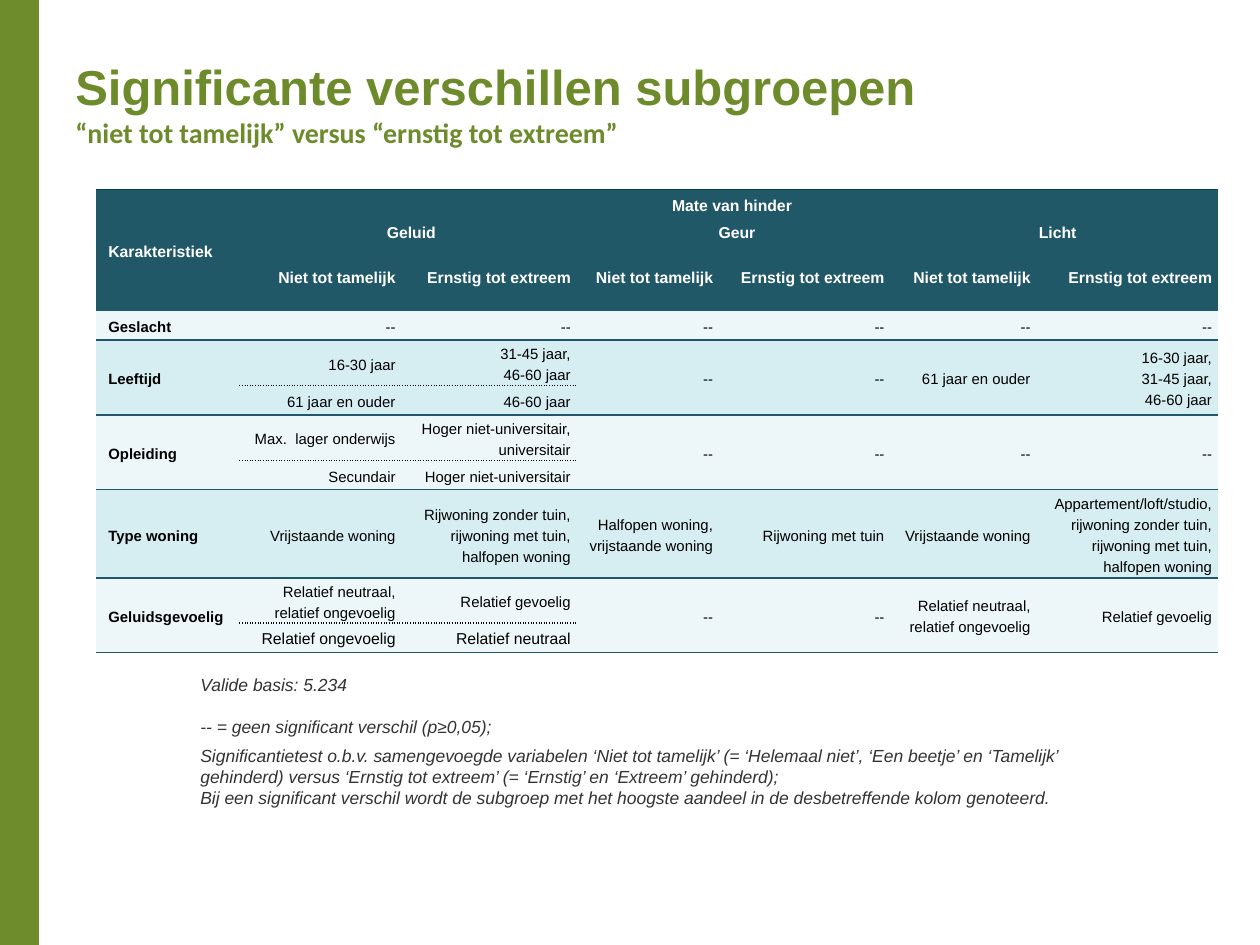
import pptx
import pptx.dml.color
import pptx.enum.shapes
import pptx.enum.text
import pptx.util
import lxml.etree

ALIGN = pptx.enum.text.PP_ALIGN
ANCHOR = pptx.enum.text.MSO_ANCHOR
Pt = pptx.util.Pt
NAMESPACE = "http://schemas.openxmlformats.org/drawingml/2006/main"
PLAIN_TABLE = "{2D5ABB26-0587-4C30-8999-92F81FD0307C}"
GREEN, TEAL, DARK_TEAL = "6D8B2B", "215868", "004644"
BANDS = ["EDF7F9", "D6EDF2"]

COLUMNS = [11.4, 12.9, 13.9, 11.3, 13.6, 11.6, 14.4]
ROWS = [4, 3, 9, 3.9, 6, 3.9, 6, 3.9, 11.65, 6, 3.9]
HEADER_ROWS = 3
SPLIT_ROWS = [4, 6, 9]
SPLIT_COLUMNS = [1, 2]
NONE = "--"
CELLS = [
    ["Karakteristiek", "Mate van hinder"],
    ["", "Geluid", "", "Geur", "", "Licht"],
    [""] + ["Niet tot tamelijk", "Ernstig tot extreem"] * 3,
    ["Geslacht"] + [NONE] * 6,
    ["Leeftijd", "16-30 jaar", "31-45 jaar,\n46-60 jaar", NONE, NONE,
     "61 jaar en ouder", "16-30 jaar,\n31-45 jaar,\n46-60 jaar"],
    ["", "61 jaar en ouder", "46-60 jaar"],
    ["Opleiding", "Max.  lager onderwijs", "Hoger niet-universitair,\nuniversitair"] + [NONE] * 4,
    ["", "Secundair", "Hoger niet-universitair"],
    ["Type woning", "Vrijstaande woning",
     "Rijwoning zonder tuin,\nrijwoning met tuin,\nhalfopen woning",
     "Halfopen woning,\nvrijstaande woning", "Rijwoning met tuin", "Vrijstaande woning",
     "Appartement/loft/studio,\nrijwoning zonder tuin,\nrijwoning met tuin,\nhalfopen woning"],
    ["Geluidsgevoelig", "Relatief neutraal,\nrelatief ongevoelig", "Relatief gevoelig", NONE, NONE,
     "Relatief neutraal,\nrelatief ongevoelig", "Relatief gevoelig"],
    ["", "Relatief ongevoelig", "Relatief neutraal"],
]
NOTES = [
    ("Valide basis: 5.234", 0),
    ("-- = geen significant verschil (p≥0,05);", 12),
    ("Significantietest o.b.v. samengevoegde variabelen ‘Niet tot tamelijk’ (= ‘Helemaal niet’, "
     "‘Een beetje’ en ‘Tamelijk’ gehinderd) versus ‘Ernstig tot extreem’ (= ‘Ernstig’ en "
     "‘Extreem’ gehinderd);", 4.5),
    ("Bij een significant verschil wordt de subgroep met het hoogste aandeel in de "
     "desbetreffende kolom genoteerd.", 0),
]


def color(value):
    return pptx.dml.color.RGBColor.from_string(value)


def write(paragraph, text, size=8.5, font="Arial", fill="000000", bold=False, italic=False,
          align=ALIGN.LEFT, line=None, before=0):
    paragraph.alignment = align
    if line:
        paragraph.line_spacing = Pt(line)
    if before:
        paragraph.space_before = Pt(before)
    run = paragraph.add_run()
    run.text = text
    run.font.size, run.font.name = Pt(size), font
    run.font.bold, run.font.italic = bold, italic
    run.font.color.rgb = color(fill)


def border(cell, side, value, dash="solid"):
    properties = cell._tc.get_or_add_tcPr()
    line = lxml.etree.SubElement(properties, f"{{{NAMESPACE}}}{side}", w=str(Pt(1)))
    fill = lxml.etree.SubElement(line, f"{{{NAMESPACE}}}solidFill")
    lxml.etree.SubElement(fill, f"{{{NAMESPACE}}}srgbClr", val=value)
    lxml.etree.SubElement(line, f"{{{NAMESPACE}}}prstDash", val=dash)


def row_line(row, column):
    if row < 0:
        return DARK_TEAL, "solid"
    if row < HEADER_ROWS - 1 and column:
        return None
    if row in SPLIT_ROWS and column in SPLIT_COLUMNS:
        return "000000", "sysDot"
    return TEAL, "solid"


class Builder:
    def __init__(self, presentation):
        self.column = presentation.slide_width / 100
        self.row = presentation.slide_height / 125
        self.slide = presentation.slides.add_slide(presentation.slide_layouts[6])

    def place(self, left, top, width, height):
        return (round(left * self.column), round(top * self.row),
                round(width * self.column), round(height * self.row))

    def bar(self, *area, fill):
        shape = self.slide.shapes.add_shape(
            pptx.enum.shapes.MSO_SHAPE.RECTANGLE, *self.place(*area))
        shape.shadow.inherit = False
        shape.fill.solid()
        shape.fill.fore_color.rgb = color(fill)
        shape.line.fill.background()

    def text_box(self, *area, wrap=True, side=1, anchor=ANCHOR.TOP):
        frame = self.slide.shapes.add_textbox(*self.place(*area)).text_frame
        frame.word_wrap = wrap
        frame.auto_size = pptx.enum.text.MSO_AUTO_SIZE.SHAPE_TO_FIT_TEXT
        frame.vertical_anchor = anchor
        frame.margin_left = frame.margin_right = round(side * self.column)
        return frame

    def title(self, heading, subtitle):
        paragraph = self.text_box(5, 6.67, 69.5, 14, wrap=False).paragraphs[0]
        write(paragraph, heading, size=28, fill=GREEN, bold=True)
        paragraph.add_line_break()
        write(paragraph, subtitle, size=16, font="Calibri", fill=GREEN, bold=True)

    def notes(self, notes):
        frame = self.text_box(5.9, 88.17, 91.5, 19.67, side=10, anchor=ANCHOR.MIDDLE)
        for index, (text, before) in enumerate(notes):
            paragraph = frame.add_paragraph() if index else frame.paragraphs[0]
            write(paragraph, text, size=10, fill="333333", italic=True, before=before)

    def table(self, left, top):
        frame = self.slide.shapes.add_table(
            len(ROWS), len(COLUMNS), *self.place(left, top, sum(COLUMNS), sum(ROWS)))
        table = frame.table
        next(frame.element.iter(f"{{{NAMESPACE}}}tableStyleId")).text = PLAIN_TABLE
        for column, width in zip(table.columns, COLUMNS):
            column.width = round(width * self.column)
        for row, height in zip(table.rows, ROWS):
            row.height = round(height * self.row)
        self.merge(table)
        band = 1
        for row, texts in enumerate(CELLS):
            if row >= HEADER_ROWS and texts[0]:
                band = 1 - band
            for column in range(len(COLUMNS)):
                text = texts[column] if column < len(texts) else ""
                self.cell(table.cell(row, column), row, column, text, BANDS[band])

    def merge(self, table):
        table.cell(0, 0).merge(table.cell(HEADER_ROWS - 1, 0))
        table.cell(0, 1).merge(table.cell(0, len(COLUMNS) - 1))
        for column in range(1, len(COLUMNS), 2):
            table.cell(1, column).merge(table.cell(1, column + 1))
        for row in SPLIT_ROWS:
            for column in range(len(COLUMNS)):
                if column not in SPLIT_COLUMNS:
                    table.cell(row, column).merge(table.cell(row + 1, column))

    def cell(self, cell, row, column, text, band):
        header = row < HEADER_ROWS
        above, below = row_line(row - 1, column), row_line(row, column)
        if above and not cell.is_spanned:
            border(cell, "lnT", *above)
        if below:
            border(cell, "lnB", *below)
        cell.fill.solid()
        cell.fill.fore_color.rgb = color(TEAL if header else band)
        cell.vertical_anchor = ANCHOR.MIDDLE
        cell.margin_top = cell.margin_bottom = 0
        cell.margin_left = round(self.column * (1 if header or not column else 0.5))
        cell.margin_right = round(self.column * 0.5)
        align = ALIGN.LEFT if not column else ALIGN.CENTER if row < 2 else ALIGN.RIGHT
        for index, line in enumerate(text.split("\n")):
            paragraph = cell.text_frame.add_paragraph() if index else cell.text_frame.paragraphs[0]
            write(paragraph, line, size=9 if header or row == len(ROWS) - 1 else 8.5,
                  fill="FFFFFF" if header else "000000", bold=header or not column,
                  align=align, line=12)


def main():
    presentation = pptx.Presentation()
    presentation.slide_width = pptx.util.Inches(10)
    presentation.slide_height = pptx.util.Inches(7.5)
    builder = Builder(presentation)
    builder.bar(0, 0, 3.1, 125, fill="6E8C2B")
    builder.title("Significante verschillen subgroepen",
                  "“niet tot tamelijk” versus “ernstig tot extreem”")
    builder.table(7.6, 25.1)
    builder.notes(NOTES)
    presentation.save("out.pptx")


if __name__ == "__main__":
    main()
